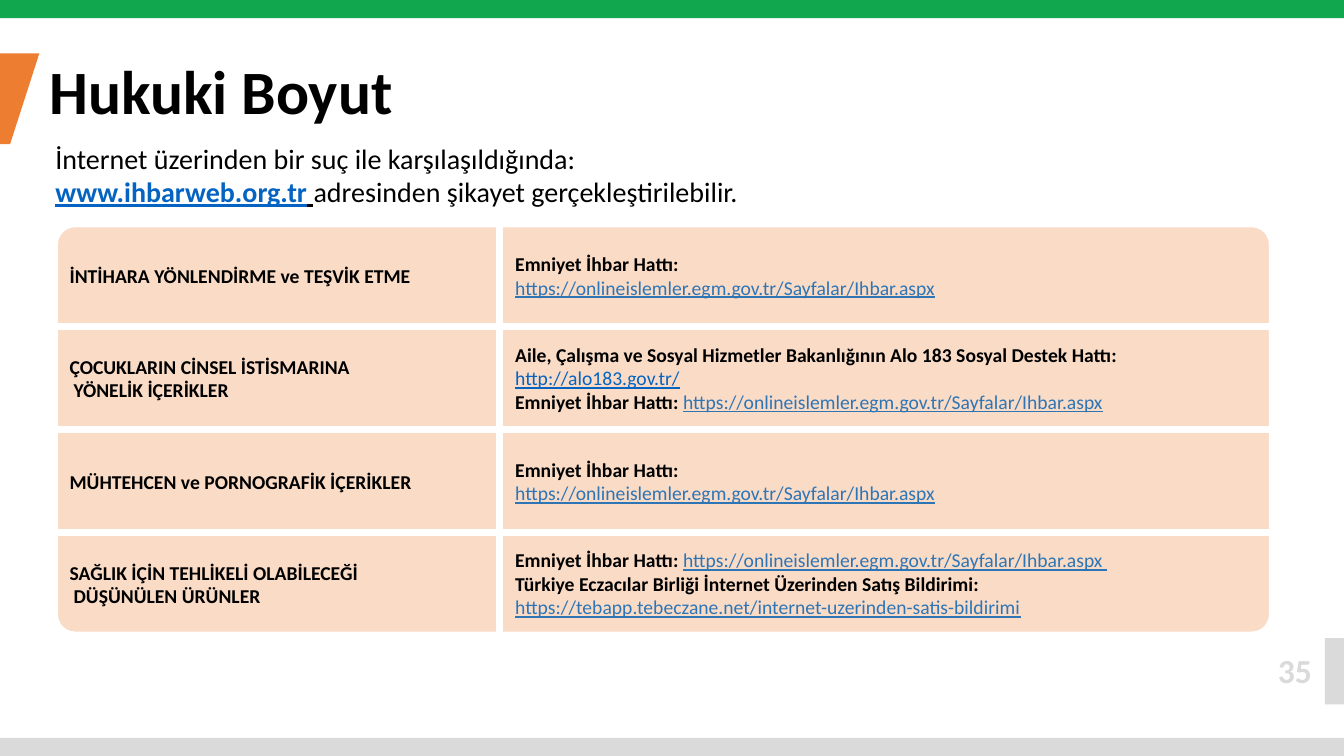
import pptx
import pptx.dml.color
import pptx.enum.shapes
import pptx.enum.text
import pptx.oxml.ns
import pptx.oxml.xmlchemy
import pptx.util

PX = 9144  # EMU per px, 100 px to the inch
FONT = "Calibri"
COLORS = {
    "green": "11A74F", "grey": "DADADA", "orange": "ED7D31", "panel": "EC7C30",
    "white": "FFFFFF", "black": "000000", "link": "0563C1", "report": "2E75B6",
}
PANEL_LEFT, PANEL_TOP, PANEL_WIDTH = 54, 222, 1208
ROW_HEIGHT, LINE_HEIGHT, COLUMN_SPLIT = 102, 24, 495
LABEL_LEFT, CONTACT_LEFT = 69, 511

# A run is (text, color name, bold, underlined)
POLICE = ("Emniyet İhbar Hattı: ", "black", True, False)
POLICE_LINK = ("https://onlineislemler.egm.gov.tr/Sayfalar/Ihbar.aspx", "report", False, True)
POLICE_LINE = [POLICE, POLICE_LINK]

# (label, label width, label lines, contact paragraphs, contact width, contact lines)
ROWS = [
    ("İNTİHARA YÖNLENDİRME ve TEŞVİK ETME", 350, 1, [POLICE_LINE], 468, 2),
    ("ÇOCUKLARIN CİNSEL İSTİSMARINA YÖNELİK İÇERİKLER", 287, 2, [
        [("Aile, Çalışma ve Sosyal Hizmetler Bakanlığının Alo 183 Sosyal Destek Hattı: ",
          "black", True, False),
         ("http://alo183.gov.tr/", "link", False, True)],
        POLICE_LINE,
    ], 730, 3),
    ("MÜHTEHCEN ve PORNOGRAFİK İÇERİKLER", 350, 1, [POLICE_LINE], 468, 2),
    ("SAĞLIK İÇİN TEHLİKELİ OLABİLECEĞİ DÜŞÜNÜLEN ÜRÜNLER", 293, 2, [
        POLICE_LINE + [(" ", "report", False, True)],
        [("Türkiye Eczacılar Birliği İnternet Üzerinden Satış Bildirimi: ", "black", True, False),
         ("https://tebapp.tebeczane.net/internet-uzerinden-satis-bildirimi",
          "report", False, True)],
    ], 744, 3),
]


def px(*lengths):
    return [pptx.util.Emu(length * PX) for length in lengths]


def color(name):
    return pptx.dml.color.RGBColor.from_string(COLORS[name])


def fill_plain(shape, name):
    shape.shadow.inherit = False
    shape.fill.solid()
    shape.fill.fore_color.rgb = color(name)
    shape.line.fill.background()


def add_bar(slide, box, name):
    shape = slide.shapes.add_shape(pptx.enum.shapes.MSO_SHAPE.RECTANGLE, *px(*box))
    fill_plain(shape, name)


def add_title_flag(slide):
    builder = slide.shapes.build_freeform(0, 53, scale=PX)
    builder.add_line_segments([(39, 53), (10, 143), (0, 143)], close=True)
    fill_plain(builder.convert_to_shape(), "orange")


def add_runs(paragraph, runs, size):
    for text, name, bold, underlined in runs:
        run = paragraph.add_run()
        run.text = text
        run.font.name = FONT
        run.font.size = pptx.util.Pt(size)
        run.font.bold = bold
        run.font.underline = underlined
        run.font.color.rgb = color(name)


def add_text(slide, box, paragraphs, size, inset=None, align=None, hanging=0):
    """Write paragraphs of runs; inset sets the top margin and clears the others."""
    frame = slide.shapes.add_textbox(*px(*box)).text_frame
    frame.word_wrap = True
    if inset is not None:
        frame.margin_left = frame.margin_right = frame.margin_bottom = 0
        frame.margin_top = px(inset)[0]
    for index, runs in enumerate(paragraphs):
        paragraph = frame.add_paragraph() if index else frame.paragraphs[0]
        if align is not None:
            paragraph.alignment = align
        if hanging:
            properties = paragraph._p.get_or_add_pPr()
            properties.set("marL", str(hanging * PX))
            properties.set("indent", str(-hanging * PX))
        add_runs(paragraph, runs, size)


def add_title(slide, text):
    title = slide.shapes.title
    title.left, title.top, title.width, title.height = px(39, 47, 1039, 84)
    title.text_frame.vertical_anchor = pptx.enum.text.MSO_ANCHOR.MIDDLE
    paragraph = title.text_frame.paragraphs[0]
    paragraph.alignment = pptx.enum.text.PP_ALIGN.LEFT
    add_runs(paragraph, [(text, "black", True, False)], 44)


def set_white_line(line):
    line.color.rgb = color("white")
    line.width = pptx.util.Pt(4.95)


def add_divider(slide, *ends):
    connector = slide.shapes.add_connector(
        pptx.enum.shapes.MSO_CONNECTOR.STRAIGHT, *px(*ends))
    set_white_line(connector.line)
    connector._element.spPr.append(pptx.oxml.xmlchemy.OxmlElement("a:effectLst"))
    return connector


def add_panel(slide):
    """Draw the rounded panel and the white lines that part its cells."""
    height = ROW_HEIGHT * len(ROWS)
    panel = slide.shapes.add_shape(
        pptx.enum.shapes.MSO_SHAPE.ROUNDED_RECTANGLE,
        *px(PANEL_LEFT, PANEL_TOP, PANEL_WIDTH, height))
    panel.adjustments[0] = 0.05
    fill_plain(panel, "panel")
    alpha = pptx.oxml.xmlchemy.OxmlElement("a:alpha")
    alpha.set("val", "27000")
    panel._element.spPr.find(".//" + pptx.oxml.ns.qn("a:srgbClr")).append(alpha)
    set_white_line(panel.line)

    add_divider(slide, COLUMN_SPLIT, PANEL_TOP, COLUMN_SPLIT, PANEL_TOP + height)
    for index in range(1, len(ROWS)):
        y = PANEL_TOP + index * ROW_HEIGHT
        divider = add_divider(slide, PANEL_LEFT, y, PANEL_LEFT + PANEL_WIDTH, y)
        if 2 * index == len(ROWS):
            divider.begin_connect(panel, 1)
            divider.end_connect(panel, 3)


def add_cell_text(slide, row, left, width, lines, paragraphs, hanging=0):
    height = lines * LINE_HEIGHT
    top = PANEL_TOP + row * ROW_HEIGHT + (ROW_HEIGHT - height) // 2
    add_text(slide, (left, top, width, height), paragraphs, 14, inset=1, hanging=hanging)


def main():
    presentation = pptx.Presentation()
    presentation.slide_width, presentation.slide_height = px(1333, 750)
    slide = presentation.slides.add_slide(presentation.slide_layouts[5])

    add_bar(slide, (0, -1, 1335, 19), "green")
    add_bar(slide, (-1, 732, 1335, 19), "grey")
    add_title_flag(slide)
    add_title(slide, "Hukuki Boyut")
    add_text(slide, (45, 135, 925, 78), [
        [("İnternet üzerinden bir suç ile karşılaşıldığında:", "black", False, False)],
        [("www.ihbarweb.org.tr", "link", True, True),
         (" ", "black", True, True),
         ("adresinden şikayet gerçekleştirilebilir.", "black", False, False)],
    ], 20)
    add_bar(slide, (1314, 633, 21, 66), "grey")
    add_text(slide, (1251, 640, 60, 50), [[("35", "grey", True, False)]], 24,
             align=pptx.enum.text.PP_ALIGN.RIGHT)

    add_panel(slide)
    for row, (label, label_width, label_lines, contacts, width, lines) in enumerate(ROWS):
        add_cell_text(slide, row, LABEL_LEFT, label_width, label_lines,
                      [[(label, "black", True, False)]], hanging=4)
        add_cell_text(slide, row, CONTACT_LEFT, width, lines, contacts)

    presentation.save("out.pptx")


if __name__ == "__main__":
    main()
